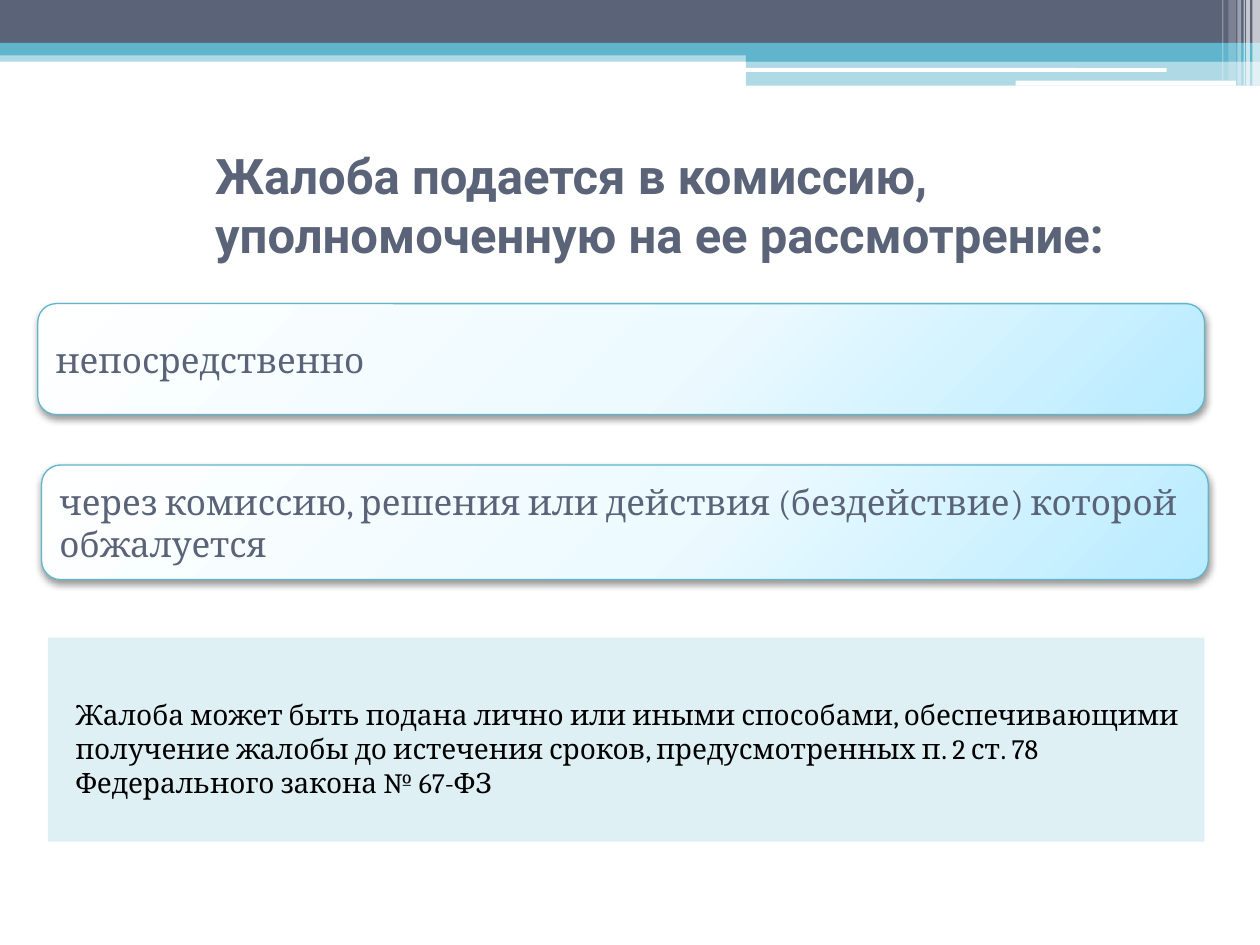
from dataclasses import dataclass

from lxml import etree
from pptx import Presentation
from pptx.dml.color import RGBColor
from pptx.enum.shapes import MSO_SHAPE
from pptx.enum.text import MSO_ANCHOR, PP_ALIGN
from pptx.oxml import parse_xml
from pptx.oxml.ns import nsdecls, qn
from pptx.util import Inches, Pt

RECTANGLE = MSO_SHAPE.RECTANGLE
ROUNDED = MSO_SHAPE.ROUNDED_RECTANGLE
MIDDLE, TOP = MSO_ANCHOR.MIDDLE, MSO_ANCHOR.TOP
LEFT = PP_ALIGN.LEFT


@dataclass(frozen=True)
class Theme:
    slate: str = "5A6378"
    teal: str = "60B5CC"
    white: str = "FFFFFF"
    black: str = "000000"
    note_fill: str = "DFF0F5"
    card_stops: tuple = ((0, "FEFFFF"), (55, "EDFAFF"), (100, "B7EBFF"))
    title_font: str = "Roboto"
    body_font: str = "Cambria"
    title_size: int = 28
    card_size: int = 20
    note_size: int = 16


theme = Theme()
deck = Presentation()
deck.slide_width, deck.slide_height = Inches(10), Inches(7.5)
page = deck.slides.add_slide(deck.slide_layouts[6])


def add_block(kind, place, color, opacity=100):
    """Add a borderless, shadowless shape with a solid fill."""
    block = page.shapes.add_shape(kind, *map(Inches, place))
    block.shadow.inherit = False
    block.line.fill.background()
    block.fill.solid()
    block.fill.fore_color.rgb = RGBColor.from_string(color)
    if opacity < 100:
        srgb = block.fill._xPr.find(".//" + qn("a:srgbClr"))
        etree.SubElement(srgb, qn("a:alpha"), val=str(opacity * 1000))
    return block


def write_text(box, text, font, size, color, bold=False, anchor=MIDDLE):
    frame = box.text_frame
    frame.word_wrap = True
    frame.vertical_anchor = anchor
    para = frame.paragraphs[0]
    para.alignment = LEFT
    span = para.add_run()
    span.text = text
    span.font.name = font
    span.font.size = Pt(size)
    span.font.bold = bold
    span.font.color.rgb = RGBColor.from_string(color)


# Header bands
for place, color, opacity in (
    ((0, 0.4, 10, 0.09), theme.teal, 50),
    ((0, 0, 10, 0.34), theme.slate, 100),
    ((0, 0.34, 10, 0.1), theme.teal, 100),
    ((5.92, 0.39, 4.08, 0.1), theme.teal, 100),
    ((5.92, 0.48, 4.08, 0.2), theme.teal, 50),
):
    add_block(RECTANGLE, place, color, opacity)

for place in ((5.91, 0.54, 3.35, 0.03), (8.06, 0.64, 1.75, 0.04)):
    add_block(ROUNDED, place, theme.white)

# Translucent stripes at the right edge
for left, width, height, opacity in (
    (9.94, 0.06, 0.68, 65),
    (9.89, 0.03, 0.68, 65),
    (9.87, 0.01, 0.68, 60),
    (9.82, 0.03, 0.68, 40),
    (9.75, 0.06, 0.64, 20),
    (9.7, 0.01, 0.64, 30),
):
    add_block(RECTANGLE, (left, 0, width, height), theme.white, opacity)

# Title
title = page.shapes.add_textbox(Inches(1.61), Inches(0.83), Inches(8.03), Inches(1.58))
write_text(title, "Жалоба подается в комиссию, уполномоченную на ее рассмотрение:",
           theme.title_font, theme.title_size, theme.slate, bold=True)

# Note
note = add_block(RECTANGLE, (0.38, 5.06, 9.18, 1.62), theme.note_fill)
note.text_frame.margin_left = Inches(0.22)
note.text_frame.margin_top = Inches(0.48)
write_text(note, "Жалоба может быть подана лично или иными способами, обеспечивающими "
           "получение жалобы до истечения сроков, предусмотренных п. 2 ст. 78 "
           "Федерального закона № 67-ФЗ",
           theme.body_font, theme.note_size, theme.black, anchor=TOP)

# Ways to file a complaint
stops = "".join(f'<a:gs pos="{position * 1000}"><a:srgbClr val="{color}"/></a:gs>'
                for position, color in theme.card_stops)
gradient = (f'<a:gradFill {nsdecls("a")} rotWithShape="1"><a:gsLst>{stops}</a:gsLst>'
            '<a:path path="circle"><a:fillToRect l="-40000" t="-90000" r="140000" b="190000"/>'
            '</a:path></a:gradFill>')
shadow = (f'<a:outerShdw {nsdecls("a")} blurRad="{Pt(4.1)}" dist="{Pt(2)}" dir="5400000" '
          f'rotWithShape="0"><a:srgbClr val="{theme.black}"><a:alpha val="40000"/>'
          '</a:srgbClr></a:outerShdw>')

for place, text in (
    ((0.3, 2.41, 9.26, 0.88), "непосредственно"),
    ((0.33, 3.69, 9.26, 0.91),
     "через комиссию, решения или действия (бездействие) которой обжалуется"),
):
    card = add_block(ROUNDED, place, theme.white)
    card.line.color.rgb = RGBColor.from_string(theme.teal)
    card.line.width = Pt(0.75)
    properties = card._element.spPr
    properties.replace(properties.find(qn("a:solidFill")), parse_xml(gradient))
    properties.find(qn("a:effectLst")).append(parse_xml(shadow))
    write_text(card, text, theme.body_font, theme.card_size, theme.slate)

deck.save("out.pptx")
